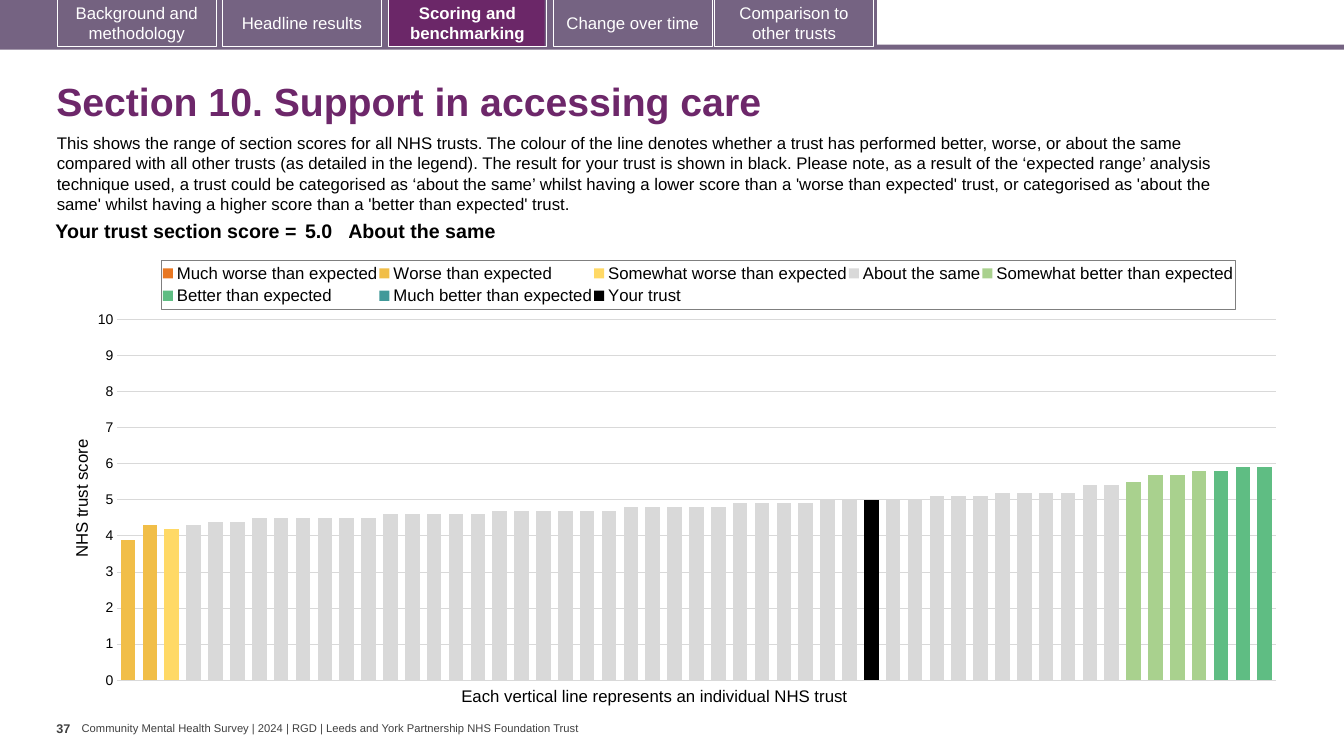
from copy import deepcopy

from lxml import etree
from pptx import Presentation, util as u
from pptx.chart.data import CategoryChartData
from pptx.dml.color import RGBColor
from pptx.enum import chart as charts, shapes, text
from pptx.oxml import parse_xml
from pptx.oxml.ns import nsdecls, qn


class Theme:
    font = "Arial"
    band, first_tab, active = "756382", "746280", "6B2768"
    title, ink, muted, white = "6D276A", "000000", "404040", "FFFFFF"
    grid, legend_line = "D9D9D9", "7F7F7F"
    footer_size, page_size, axis_size, body_size, score_size, title_size = 8, 9, 10, 12, 14, 28


def write(frame, words, size, colour, bold=False, align=text.PP_ALIGN.LEFT):
    """Put one run of styled text in the frame's first paragraph."""
    paragraph = frame.paragraphs[0]
    paragraph.alignment = align
    run = paragraph.add_run()
    run.text = words
    run.font.name, run.font.size, run.font.bold = Theme.font, u.Pt(size), bold
    run.font.color.rgb = RGBColor.from_string(colour)
    return paragraph


def set_layout(element, index, inner=False, **fractions):
    """Place a chart part by fractions of the chart's size."""
    for old in element.findall(qn("c:layout")):
        element.remove(old)
    layout = etree.Element(qn("c:layout"))
    manual = etree.SubElement(layout, qn("c:manualLayout"))
    settings = {"layoutTarget": "inner"} if inner else {}
    settings.update(xMode="edge", yMode="edge", **fractions)
    for tag, value in settings.items():
        etree.SubElement(manual, qn(f"c:{tag}")).set("val", str(value))
    element.insert(index, layout)


deck = Presentation()
deck.slide_width, deck.slide_height = u.Pt(960), u.Pt(540)
slide = deck.slides.add_slide(deck.slide_layouts[6])

# Navigation: bands, active panel, then tabs (left, top, width, height, fill, line, label)
tab_top, tab_width, tab_height = -0.7, 113.4, 33.8
tabs = [
    (41, Theme.first_tab, "Background and methodology"),
    (159, None, "Headline results"),
    (277.2, None, "Scoring and benchmarking"),
    (395.3, Theme.band, "Change over time"),
    (510.5, Theme.band, "Comparison to other trusts"),
]
navigation = [
    (0, 31.9, 960, 3.6, Theme.band, None, None),
    (0, 0, 626.4, 33.8, Theme.band, None, None),
    (278, 0, 111, 33.1, Theme.active, None, None),
] + [(left, tab_top, tab_width, tab_height, fill, Theme.white, label) for left, fill, label in tabs]
for *box, fill, line, label in navigation:
    part = slide.shapes.add_shape(shapes.MSO_SHAPE.RECTANGLE, *map(u.Pt, box))
    part.shadow.inherit = False
    if fill:
        part.fill.solid()
        part.fill.fore_color.rgb = RGBColor.from_string(fill)
    else:
        part.fill.background()
    if line:
        part.line.color.rgb = RGBColor.from_string(line)
        part.line.width = u.Pt(0.75)
    else:
        part.line.fill.background()
    if label:
        part.text_frame.vertical_anchor = text.MSO_ANCHOR.MIDDLE
        write(part.text_frame, label, Theme.body_size, Theme.white,
              label.startswith("Scoring"), text.PP_ALIGN.CENTER)

# Heading
heading = slide.shapes.add_textbox(u.Pt(33.1), u.Pt(48.2), u.Pt(899.3), u.Pt(51.8)).text_frame
heading.word_wrap = True
heading.vertical_anchor = text.MSO_ANCHOR.MIDDLE
write(heading, "Section 10. Support in accessing care",
      Theme.title_size, Theme.title, True).line_spacing = 0.9

# Introduction
introduction = slide.shapes.add_textbox(u.Pt(33.5), u.Pt(91.4), u.Pt(873.4), u.Pt(65.5)).text_frame
introduction.word_wrap = True
write(introduction,
      "This shows the range of section scores for all NHS trusts. The colour of the line denotes "
      "whether a trust has performed better, worse, or about the same compared with all other "
      "trusts (as detailed in the legend). The result for your trust is shown in black. Please "
      "note, as a result of the ‘expected range’ analysis technique used, a trust could be "
      "categorised as ‘about the same’ whilst having a lower score than a 'worse than expected' "
      "trust, or categorised as 'about the same' whilst having a higher score than a 'better than "
      "expected' trust.", Theme.body_size, Theme.ink)

# Section score
score_table = slide.shapes.add_table(1, 3, u.Pt(25.6), u.Pt(154.8), u.Pt(842), u.Pt(22.3)).table
score_table.first_row = score_table.horz_banding = False
score_table.rows[0].height = u.Pt(22.3)
score_cells = [
    ("Your trust section score =", 189.4, 2.9, text.PP_ALIGN.RIGHT),
    ("5.0", 33.8, 2.9, text.PP_ALIGN.LEFT),
    ("About the same", 618.5, 0, text.PP_ALIGN.LEFT),
]
for column, (words, width, margin, align) in enumerate(score_cells):
    score_table.columns[column].width = u.Pt(width)
    cell = score_table.cell(0, column)
    cell.fill.background()
    cell.margin_left = cell.margin_right = u.Pt(margin)
    cell.margin_top = cell.margin_bottom = u.Pt(2.9)
    write(cell.text_frame, words, Theme.score_size, Theme.ink, True, align)

# Scores: name, colour, position of the first trust, values
trust_count = 53
score_groups = [
    ("Much worse than expected", "E87722", 0, []),
    ("Worse than expected", "F1BE48", 0, [3.9, 4.3]),
    ("Somewhat worse than expected", "FFD966", 2, [4.2]),
    ("About the same", "D9D9D9", 3,
     [4.3] + [4.4] * 2 + [4.5] * 6 + [4.6] * 5 + [4.7] * 6 + [4.8] * 5 + [4.9] * 4
     + [5] * 5 + [5.1] * 3 + [5.2] * 4 + [5.4] * 2),
    ("Somewhat better than expected", "A9D18E", 46, [5.5, 5.7, 5.7, 5.8]),
    ("Better than expected", "5FBD83", 50, [5.8, 5.9, 5.9]),
    ("Much better than expected", "419999", 0, []),
    ("Your trust", "000000", 34, [5]),
]
scores = CategoryChartData()
scores.categories = [str(number + 1) for number in range(trust_count)]
for name, _, first, values in score_groups:
    after = trust_count - first - len(values)
    scores.add_series(name, [None] * first + values + [None] * after)
chart = slide.shapes.add_chart(charts.XL_CHART_TYPE.COLUMN_CLUSTERED, u.Pt(48.7), u.Pt(177.8),
                               u.Pt(874.8), u.Pt(319.4), scores).chart
chart.has_title = False
chart.font.name, chart.font.size = Theme.font, u.Pt(Theme.axis_size)
chart.font.color.rgb = RGBColor.from_string(Theme.ink)
columns = chart.plots[0]
columns.gap_width, columns.overlap, columns.vary_by_categories = 50, 100, False
for series, (_, colour, _, _) in zip(columns.series, score_groups):
    series.format.fill.solid()
    series.format.fill.fore_color.rgb = RGBColor.from_string(colour)
plot_area = chart._chartSpace.find(".//" + qn("c:plotArea"))
set_layout(plot_area, 0, True, x=0.04, y=0.158, w=0.946, h=0.807)

# Axes
chart.category_axis.visible = False
score_axis = chart.value_axis
score_axis.minimum_scale, score_axis.maximum_scale, score_axis.major_unit = 0, 10, 1
score_axis.major_tick_mark = charts.XL_TICK_MARK.NONE
score_axis.format.line.fill.background()

# Your trust on a second, unlabelled axis
group_columns = plot_area.find(qn("c:barChart"))
trust_columns = deepcopy(group_columns)
group_columns.remove(group_columns.findall(qn("c:ser"))[-1])
for group in trust_columns.findall(qn("c:ser"))[:-1]:
    trust_columns.remove(group)
group_columns.addnext(trust_columns)
main_axes = [plot_area.find(qn("c:catAx")), plot_area.find(qn("c:valAx"))]
trust_axes = [deepcopy(axis) for axis in main_axes]
main_axes[-1].addnext(trust_axes[0])
trust_axes[0].addnext(trust_axes[1])
trust_ids = ["5001", "5002"]
for reference, axis, own, other in zip(trust_columns.findall(qn("c:axId")), trust_axes,
                                       trust_ids, reversed(trust_ids)):
    reference.set("val", own)
    axis.find(qn("c:axId")).set("val", own)
    axis.find(qn("c:crossAx")).set("val", other)
trust_score_axis = trust_axes[1]
trust_score_axis.find(qn("c:axPos")).set("val", "r")
trust_score_axis.find(qn("c:crosses")).set("val", "max")
trust_score_axis.find(qn("c:tickLblPos")).set("val", "none")
for gridlines in trust_score_axis.findall(qn("c:majorGridlines")):
    trust_score_axis.remove(gridlines)

# Gridlines and title of the score axis
score_axis.major_gridlines.format.line.color.rgb = RGBColor.from_string(Theme.grid)
score_axis.major_gridlines.format.line.width = u.Pt(0.75)
score_title = score_axis.axis_title
write(score_title.text_frame, "NHS trust score", Theme.body_size, Theme.ink)
score_title._element.find(".//" + qn("a:bodyPr")).set("rot", "-5400000")
set_layout(score_title._element, 1, x=0, y=0.419)

# Legend
chart.has_legend = True
legend = chart.legend
legend.position = charts.XL_LEGEND_POSITION.TOP
legend.include_in_layout = False
legend.font.name, legend.font.size = Theme.font, u.Pt(Theme.body_size)
legend.font.color.rgb = RGBColor.from_string(Theme.ink)
set_layout(legend._element, 1, x=0.076, y=0.025, w=0.877, h=0.11)
legend._element.find(qn("c:txPr")).addprevious(parse_xml(
    f'<c:spPr {nsdecls("c", "a")}><a:ln w="9525"><a:solidFill>'
    f'<a:srgbClr val="{Theme.legend_line}"/></a:solidFill></a:ln></c:spPr>'))

# Chart caption and footer: text, left, top, width, height, size, colour, bold, margins
captions = [
    ("Each vertical line represents an individual NHS trust",
     329.5, 489.6, 281.5, 14.4, Theme.body_size, Theme.ink, False),
    ("37", 40.3, 514.8, 18, 21.6, Theme.page_size, Theme.muted, True),
    ("Community Mental Health Survey | 2024 | RGD | Leeds and York Partnership NHS Foundation Trust",
     58.3, 515.5, 360.7, 9.4, Theme.footer_size, Theme.muted, False),
]
for words, *box, size, colour, bold in captions:
    frame = slide.shapes.add_textbox(*map(u.Pt, box)).text_frame
    frame.word_wrap = False
    frame.margin_left = frame.margin_right = frame.margin_top = frame.margin_bottom = 0
    write(frame, words, size, colour, bold)

deck.save("out.pptx")
